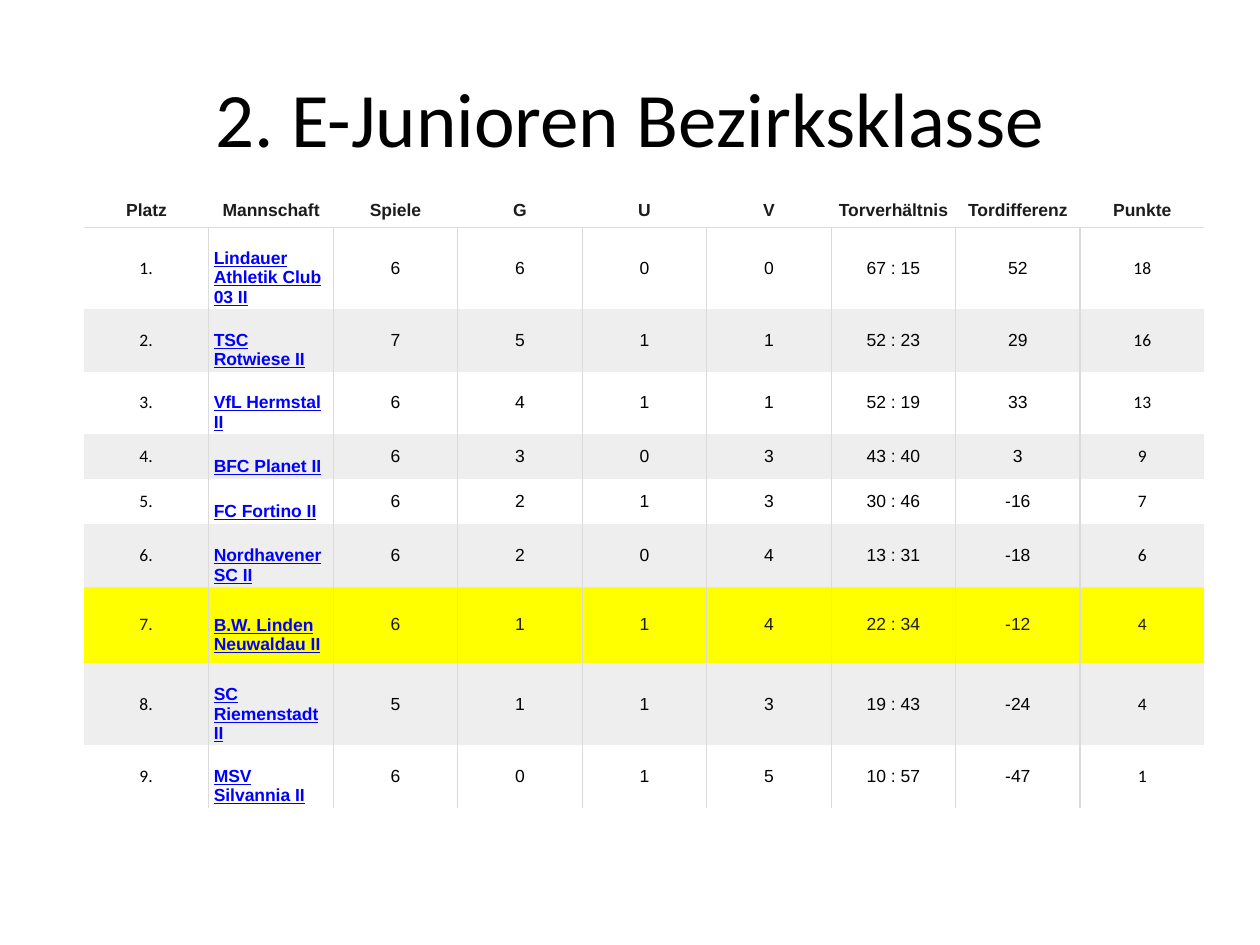
from dataclasses import astuple, dataclass

import pptx
import pptx.dml.color
import pptx.enum.text
import pptx.oxml
import pptx.oxml.ns
import pptx.util
from pptx.util import Cm

COLORS = {
    "black": "000000",
    "dark": "1C1C1C",
    "link": "0000FF",
    "grid": "DBDBDB",
    "white": "FFFFFF",
    "band": "EEEEEE",
    "highlight": "FFFF00",
}
NO_STYLE = "{2D5ABB26-0587-4C30-8999-92F81FD0307C}"
HEADERS = ("Platz", "Mannschaft", "Spiele", "G", "U", "V",
           "Torverhältnis", "Tordifferenz", "Punkte")
RANK_COL, TEAM_COL, POINTS_COL = 0, 1, len(HEADERS) - 1
OWN_RANK = 7
COL_WIDTH = Cm(2.51)
HEADER_HEIGHT = Cm(0.69)
ONE_LINE, TWO_LINES, OWN_ROW, THREE_LINES = Cm(0.91), Cm(1.26), Cm(1.54), Cm(1.65)


@dataclass
class Standing:
    team: str
    played: int
    won: int
    drawn: int
    lost: int
    goals: str
    difference: int
    points: int


@dataclass
class CellStyle:
    fill: str
    color: str = "black"
    font: str = "Arial"
    bold: bool = False
    underline: bool = False
    align: pptx.enum.text.PP_ALIGN = pptx.enum.text.PP_ALIGN.CENTER
    left: pptx.util.Length = Cm(0.1)
    top: pptx.util.Length = Cm(0.03)
    borders: str = ""


STANDINGS = [
    (Standing("Lindauer Athletik Club 03 II", 6, 6, 0, 0, "67 : 15", 52, 18), THREE_LINES),
    (Standing("TSC Rotwiese II", 7, 5, 1, 1, "52 : 23", 29, 16), TWO_LINES),
    (Standing("VfL Hermstal II", 6, 4, 1, 1, "52 : 19", 33, 13), TWO_LINES),
    (Standing("BFC Planet II", 6, 3, 0, 3, "43 : 40", 3, 9), ONE_LINE),
    (Standing("FC Fortino II", 6, 2, 1, 3, "30 : 46", -16, 7), ONE_LINE),
    (Standing("Nordhavener SC II", 6, 2, 0, 4, "13 : 31", -18, 6), TWO_LINES),
    (Standing("B.W. Linden Neuwaldau II", 6, 1, 1, 4, "22 : 34", -12, 4), OWN_ROW),
    (Standing("SC Riemenstadt II", 5, 1, 1, 3, "19 : 43", -24, 4), THREE_LINES),
    (Standing("MSV Silvannia II", 6, 0, 1, 5, "10 : 57", -47, 1), TWO_LINES),
]


def rgb(name: str) -> pptx.dml.color.RGBColor:
    return pptx.dml.color.RGBColor.from_string(COLORS[name])


def add_border(cell, side: str) -> None:
    """Draw one cell edge; side is L, R, T or B, called in that order."""
    ns = pptx.oxml.ns.nsdecls("a")
    cell._tc.get_or_add_tcPr().append(pptx.oxml.parse_xml(
        f'<a:ln{side} {ns} w="9525"><a:solidFill>'
        f'<a:srgbClr val="{COLORS["grid"]}"/></a:solidFill></a:ln{side}>'))


def fill_cell(cell, text: str, style: CellStyle) -> None:
    for side in style.borders:
        add_border(cell, side)
    cell.fill.solid()
    cell.fill.fore_color.rgb = rgb(style.fill)
    cell.vertical_anchor = pptx.enum.text.MSO_ANCHOR.MIDDLE
    cell.margin_left, cell.margin_right = style.left, Cm(0.1)
    cell.margin_top, cell.margin_bottom = style.top, Cm(0.03)
    p = cell.text_frame.paragraphs[0]
    p.text = text
    p.alignment = style.align
    p.font.name = style.font
    p.font.size = pptx.util.Pt(10)
    p.font.bold = style.bold
    p.font.underline = style.underline
    p.font.color.rgb = rgb(style.color)


def body_style(rank: int, col: int) -> CellStyle:
    own = rank == OWN_RANK
    fill = "highlight" if own else "white" if rank % 2 else "band"
    style = CellStyle(fill, color="dark" if own else "black")
    style.borders = "L" * (col > RANK_COL) + "R" * (col < POINTS_COL)
    if col in (RANK_COL, POINTS_COL):
        style.font = "Calibri"
    if col == RANK_COL:
        style.left = Cm(0.08)
    if col == TEAM_COL:
        style.color, style.bold, style.underline = "link", True, True
        style.align = pptx.enum.text.PP_ALIGN.LEFT
        style.top = Cm(0.43)
    return style


def add_title(s, text: str) -> None:
    title = s.shapes.title
    title.left, title.top, title.width, title.height = Cm(1.27), Cm(0.76), Cm(22.86), Cm(3.18)
    tf = title.text_frame
    tf.text = text
    tf.vertical_anchor = pptx.enum.text.MSO_ANCHOR.MIDDLE
    p = tf.paragraphs[0]
    p.alignment = pptx.enum.text.PP_ALIGN.CENTER
    p.font.name = "Calibri"
    p.font.size = pptx.util.Pt(44)
    p.font.color.rgb = rgb("black")


def add_standings(s) -> None:
    heights = [HEADER_HEIGHT] + [height for _, height in STANDINGS]
    frame = s.shapes.add_table(len(heights), len(HEADERS), Cm(1.7), Cm(3.89),
                               COL_WIDTH * len(HEADERS), sum(heights))
    table = frame.table
    table.first_row = table.horz_banding = False
    table._tbl.tblPr.find(pptx.oxml.ns.qn("a:tableStyleId")).text = NO_STYLE
    for column in table.columns:
        column.width = COL_WIDTH
    for row, height in zip(table.rows, heights):
        row.height = height

    header = CellStyle("white", color="dark", bold=True, borders="B")
    for col, text in enumerate(HEADERS):
        fill_cell(table.cell(0, col), text, header)
    for rank, (standing, _) in enumerate(STANDINGS, start=1):
        for col, value in enumerate((f"{rank}.", *astuple(standing))):
            fill_cell(table.cell(rank, col), str(value), body_style(rank, col))


def main() -> None:
    prs = pptx.Presentation()
    prs.slide_width, prs.slide_height = Cm(25.4), Cm(19.05)
    s = prs.slides.add_slide(prs.slide_layouts[5])
    add_title(s, "2. E-Junioren Bezirksklasse")
    add_standings(s)
    prs.save("out.pptx")


if __name__ == "__main__":
    main()
